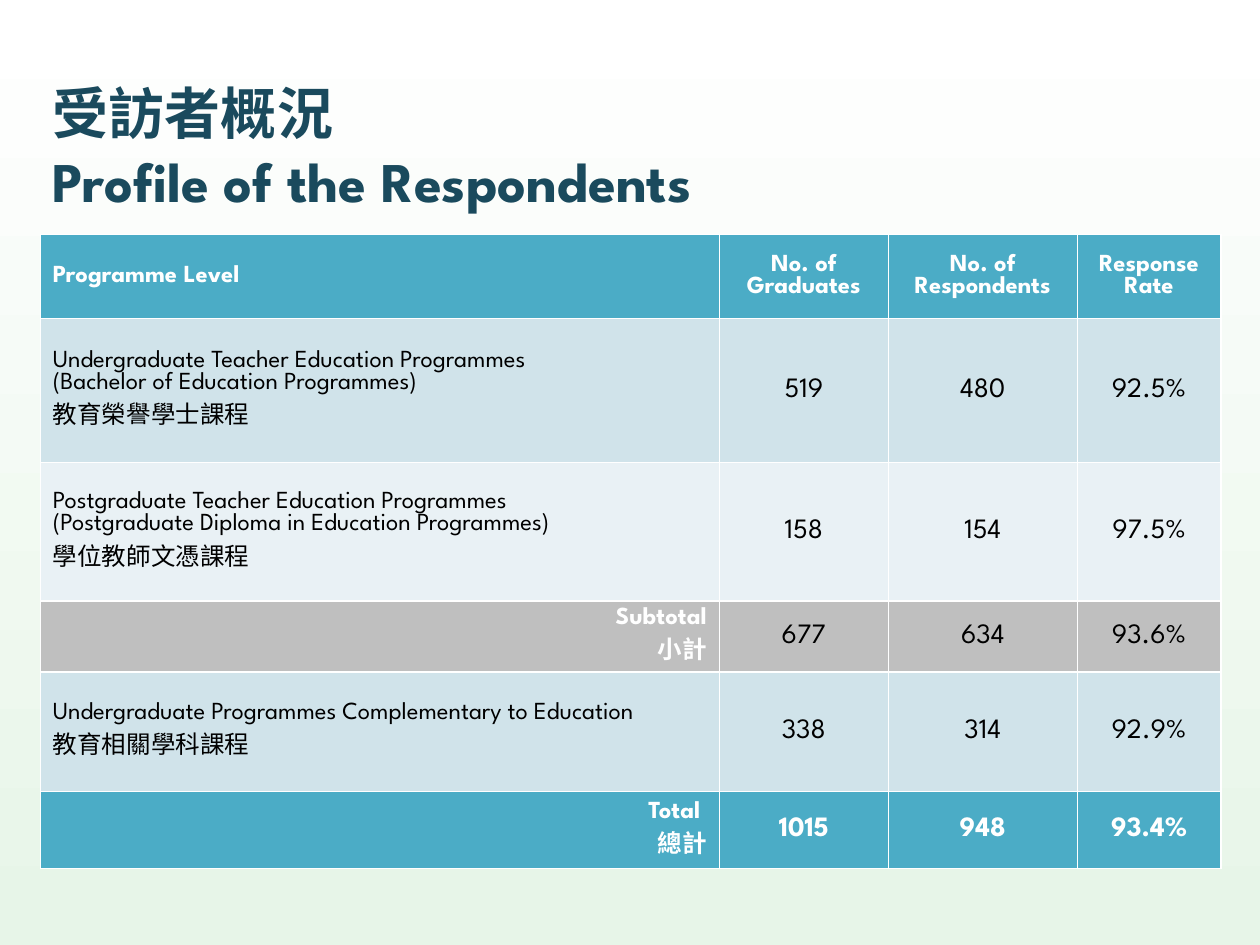
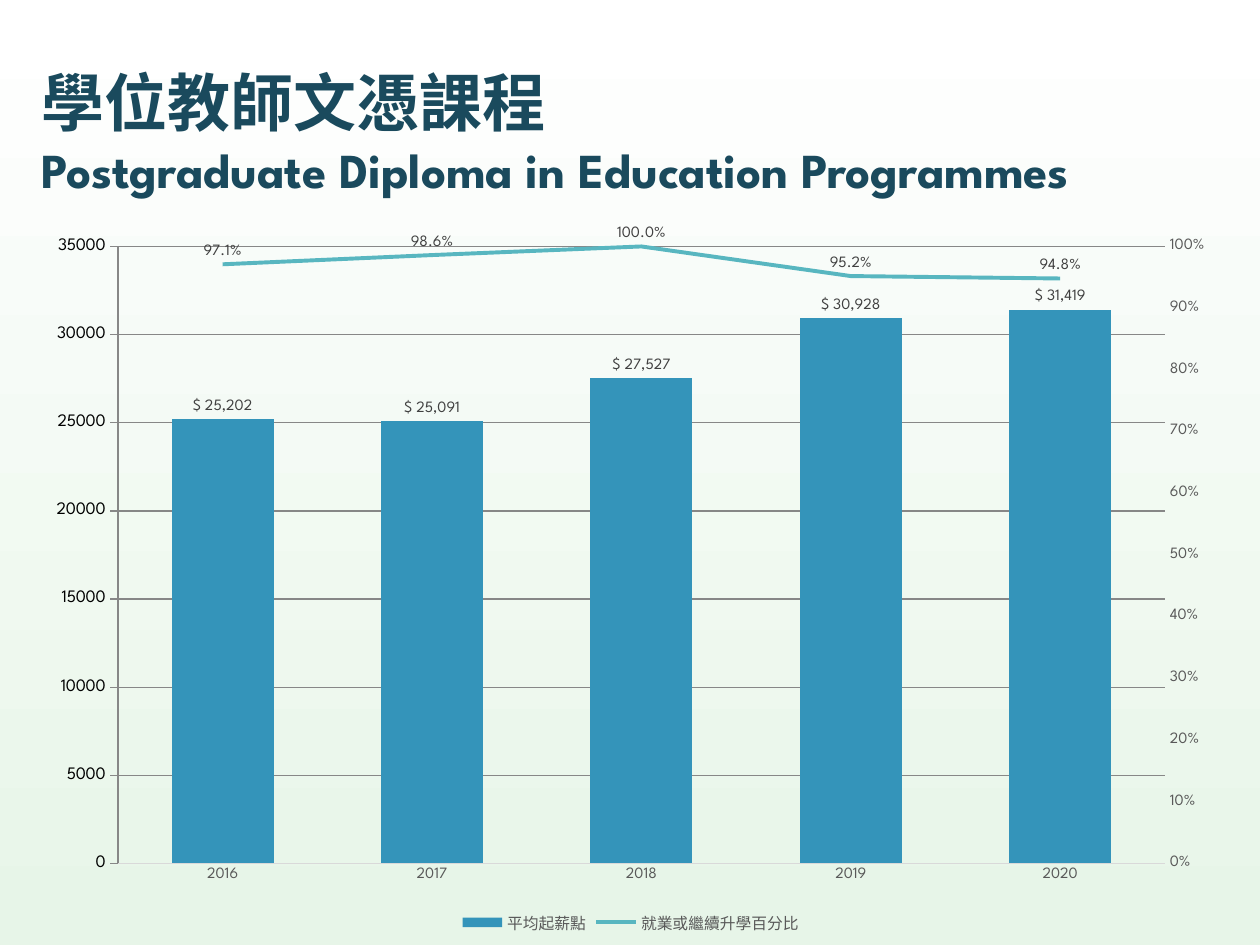
import copy
from dataclasses import dataclass

import pptx
import pptx.chart.axis
import pptx.chart.data
import pptx.dml.color
import pptx.enum.chart
import pptx.enum.text
import pptx.oxml
import pptx.oxml.ns
import pptx.util

Inches, Pt = pptx.util.Inches, pptx.util.Pt
Align, Anchor = pptx.enum.text.PP_ALIGN, pptx.enum.text.MSO_ANCHOR
Place, Tick = pptx.enum.chart.XL_LABEL_POSITION, pptx.enum.chart.XL_TICK_MARK
qn = pptx.oxml.ns.qn


@dataclass(frozen=True)
class Theme:
    face: str = "League Spartan"
    white: str = "FFFFFF"
    black: str = "000000"
    mint: str = "E7F5E8"
    navy: str = "1A4A5D"
    teal: str = "4BACC6"
    pale: str = "D0E3EA"
    light: str = "E9F1F5"
    grey: str = "BFBFBF"
    grid: str = "D9D9D9"
    label: str = "404040"
    tick: str = "595959"
    bar: str = "3494BA"
    line: str = "58B6C0"
    head: float = 32
    large: float = 36
    sub: float = 27.9
    cell: float = 14
    count: float = 16
    base: float = 10
    small: float = 9


THEME = Theme()

WIDTHS = [5.39, 1.34, 1.5, 1.14]
# Row height, fill, text colour, bold, first-column alignment, cells
ROWS = [
    (0.67, THEME.teal, THEME.white, True, Align.LEFT,
     ["Programme Level", "No. of Graduates", "No. of Respondents", "Response Rate"]),
    (1.14, THEME.pale, THEME.black, False, Align.LEFT,
     ["Undergraduate Teacher Education Programmes\v"
      "(Bachelor of Education Programmes)\v教育榮譽學士課程", "519", "480", "92.5%"]),
    (1.1, THEME.light, THEME.black, False, Align.LEFT,
     ["Postgraduate Teacher Education Programmes\v"
      "(Postgraduate Diploma in Education Programmes)\n學位教師文憑課程",
      "158", "154", "97.5%"]),
    (0.56, THEME.grey, THEME.black, False, Align.RIGHT,
     ["Subtotal\n小計", "677", "634", "93.6%"]),
    (0.95, THEME.pale, THEME.black, False, Align.LEFT,
     ["Undergraduate Programmes Complementary to Education\n教育相關學科課程",
      "338", "314", "92.9%"]),
    (0.61, THEME.teal, THEME.white, True, Align.RIGHT,
     ["Total \v總計", "1015", "948", "93.4%"]),
]

YEARS = ["2016", "2017", "2018", "2019", "2020"]
PAY = [25202, 25091, 27527, 30928, 31419]
RATE = [0.971, 0.986, 1, 0.952, 0.948]


def rgb(code):
    return pptx.dml.color.RGBColor.from_string(code)


def style(font, size, tint, bold=False):
    font.name, font.size, font.bold = THEME.face, Pt(size), bold
    font.color.rgb = rgb(tint)


def paint(fill, tint):
    fill.solid()
    fill.fore_color.rgb = rgb(tint)


def shade(master):
    """Give every slide the white-to-mint background."""
    fill = master.background.fill
    fill.gradient()
    fill.gradient_angle = 270
    for stop, tint in zip(fill.gradient_stops, (THEME.white, THEME.mint)):
        stop.color.rgb = rgb(tint)


def add_slide(deck, box, top, below, size, sub=None):
    """Add a slide with a two-line title; sub is the second line's size."""
    slide = deck.slides.add_slide(deck.slide_layouts[5])
    title = slide.shapes.title
    title.left, title.top, title.width, title.height = map(Inches, box)
    frame = title.text_frame
    frame.vertical_anchor = Anchor.MIDDLE
    para = frame.paragraphs[0]
    para.alignment = Align.LEFT
    style(para.font, size, THEME.navy, True)
    para.add_run().text = top
    para.add_line_break()
    run = para.add_run()
    run.text = below
    if sub:
        run.font.size = Pt(sub)
    return slide


def fill_cell(cell, text, fill, size, tint, bold, align):
    paint(cell.fill, fill)
    cell.vertical_anchor = Anchor.MIDDLE
    cell.text_frame.text = text
    for para in cell.text_frame.paragraphs:
        para.alignment = align
        style(para.font, size, tint, bold)


def add_table(slide, box):
    table = slide.shapes.add_table(len(ROWS), len(WIDTHS), *map(Inches, box)).table
    table.last_row = True
    for col, width in zip(table.columns, WIDTHS):
        col.width = Inches(width)
    for i, (height, fill, tint, bold, align, texts) in enumerate(ROWS):
        table.rows[i].height = Inches(height)
        for j, text in enumerate(texts):
            cell = table.cell(i, j)
            size = THEME.count if i and j else THEME.cell
            if j:
                fill_cell(cell, text, fill, size, tint, bold, Align.CENTER)
            else:
                sums = align == Align.RIGHT
                fill_cell(cell, text, fill, size, THEME.white if sums else tint,
                          bold or sums, align)


def split_line(chart):
    """Move the last series to a line plot and return its value axis."""
    bars = chart.plots[0].series[0]._element.getparent()
    area = bars.getparent()
    line = pptx.oxml.parse_xml(
        f'<c:lineChart {pptx.oxml.ns.nsdecls("c")}><c:grouping val="standard"/>'
        '<c:varyColors val="0"/><c:marker val="1"/>'
        '<c:axId val="101"/><c:axId val="102"/></c:lineChart>')
    series = bars.findall(qn("c:ser"))[-1]
    for flag in series.findall(qn("c:invertIfNegative")):
        series.remove(flag)
    line.insert(2, series)
    bars.addnext(line)
    # Second pair of axes, the category one hidden
    last = area.find(qn("c:valAx"))
    pair = [copy.deepcopy(area.find(qn(tag))) for tag in ("c:catAx", "c:valAx")]
    for axis, own, other in zip(pair, ("101", "102"), ("102", "101")):
        axis.find(qn("c:axId")).set("val", own)
        axis.find(qn("c:crossAx")).set("val", other)
        last.addnext(axis)
        last = axis
    pair[1].find(qn("c:axPos")).set("val", "r")
    pair[1].find(qn("c:crosses")).set("val", "max")
    pptx.chart.axis.CategoryAxis(pair[0]).visible = False
    return pptx.chart.axis.ValueAxis(pair[1])


def set_axis(axis, grid=False):
    axis.major_tick_mark = axis.minor_tick_mark = Tick.NONE
    axis.has_major_gridlines = grid
    style(axis.tick_labels.font, THEME.small, THEME.tick)
    if grid:
        draw(axis.major_gridlines.format.line, THEME.grid, 0.75)


def set_scale(axis, top, step, code):
    axis.minimum_scale, axis.maximum_scale, axis.major_unit = 0, top, step
    axis.tick_labels.number_format = code
    axis.tick_labels.number_format_is_linked = False
    axis.format.line.fill.background()


def draw(line, tint, width):
    line.color.rgb = rgb(tint)
    line.width = Pt(width)


def set_labels(series, code, place):
    labels = series.data_labels
    labels.show_value = True
    labels.number_format, labels.number_format_is_linked = code, False
    labels.position = place
    style(labels.font, THEME.small, THEME.label)


def add_chart(slide, box):
    data = pptx.chart.data.CategoryChartData()
    data.categories = YEARS
    data.add_series("平均起薪點", PAY)
    data.add_series("就業或繼續升學百分比", RATE)
    kind = pptx.enum.chart.XL_CHART_TYPE.COLUMN_CLUSTERED
    chart = slide.shapes.add_chart(kind, *map(Inches, box), data).chart
    style(chart.font, THEME.base, THEME.black)
    chart.has_title = False

    # Axes
    right = split_line(chart)
    set_axis(chart.category_axis)
    draw(chart.category_axis.format.line, THEME.grid, 0.75)
    set_axis(chart.value_axis, grid=True)
    set_scale(chart.value_axis, 35000, 5000, "[$$-409]#,##0")
    set_axis(right)
    set_scale(right, 1, 0.1, "0%")

    # Columns and line
    bars, line = chart.plots
    bars.gap_width, bars.overlap = 105, -37
    bars.vary_by_categories = False
    pay, rate = bars.series[0], line.series[0]
    paint(pay.format.fill, THEME.bar)
    set_labels(pay, r"[$$-380A]\ #,##0", Place.OUTSIDE_END)
    draw(rate.format.line, THEME.line, 2.25)
    rate.smooth = False
    rate.marker.style = pptx.enum.chart.XL_MARKER_STYLE.NONE
    set_labels(rate, "0.0%", Place.ABOVE)

    # Legend
    chart.has_legend = True
    chart.legend.position = pptx.enum.chart.XL_LEGEND_POSITION.BOTTOM
    chart.legend.include_in_layout = False
    style(chart.legend.font, THEME.small, THEME.tick)


def main():
    deck = pptx.Presentation()
    deck.slide_width, deck.slide_height = Inches(10), Inches(7.5)
    shade(deck.slide_master)

    # Respondents
    slide = add_slide(deck, (0.32, 0.46, 7.21, 1.4), "受訪者概況",
                      "Profile of the Respondents", THEME.head)
    add_table(slide, (0.32, 1.86, 9.36, 5.04))

    # Pay and employment
    slide = add_slide(deck, (0.23, 0.29, 9.45, 1.5), "學位教師文憑課程",
                      "Postgraduate Diploma in Education Programmes",
                      THEME.large, THEME.sub)
    add_chart(slide, (0.26, 1.78, 9.49, 5.67))

    deck.save("out.pptx")


if __name__ == "__main__":
    main()
